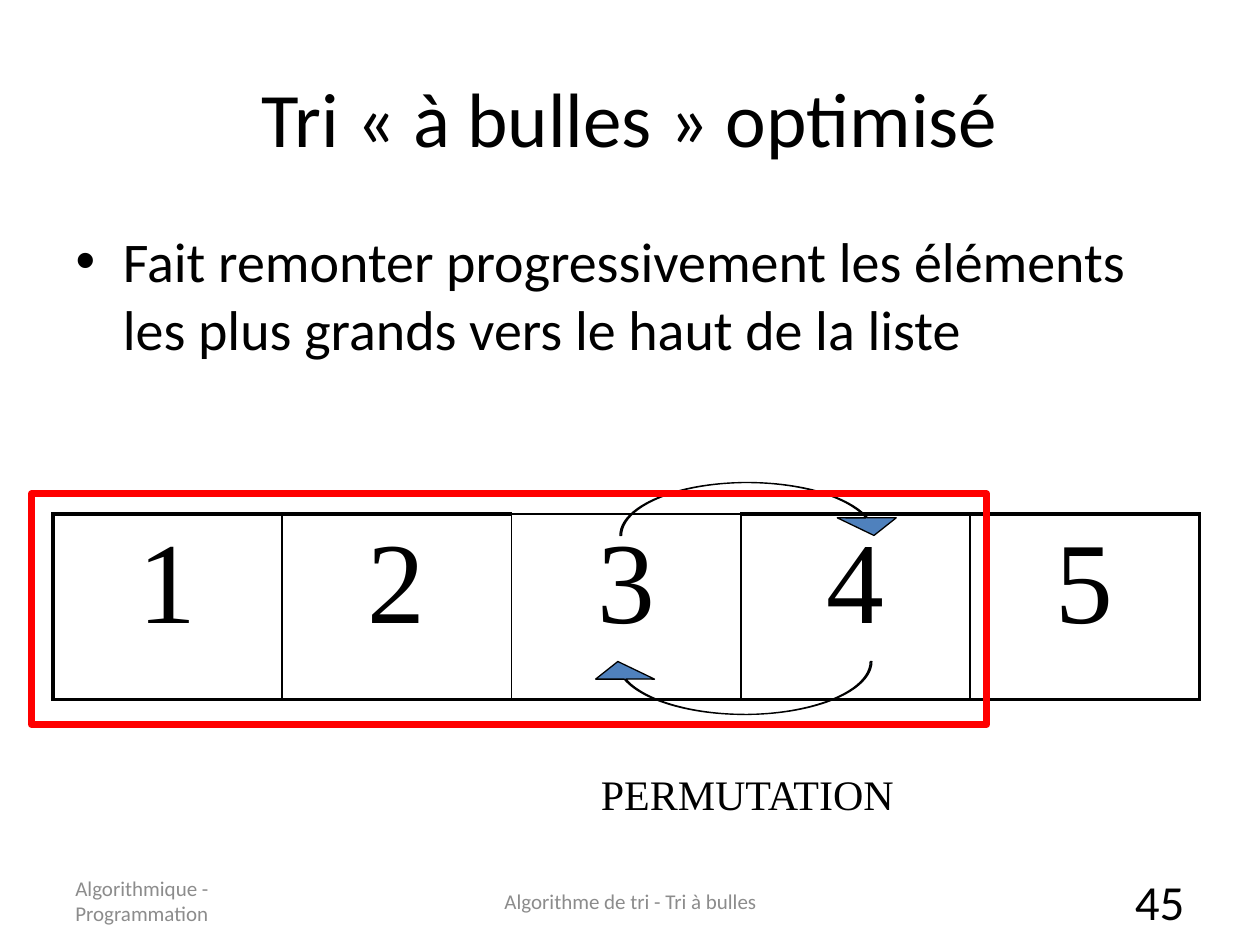
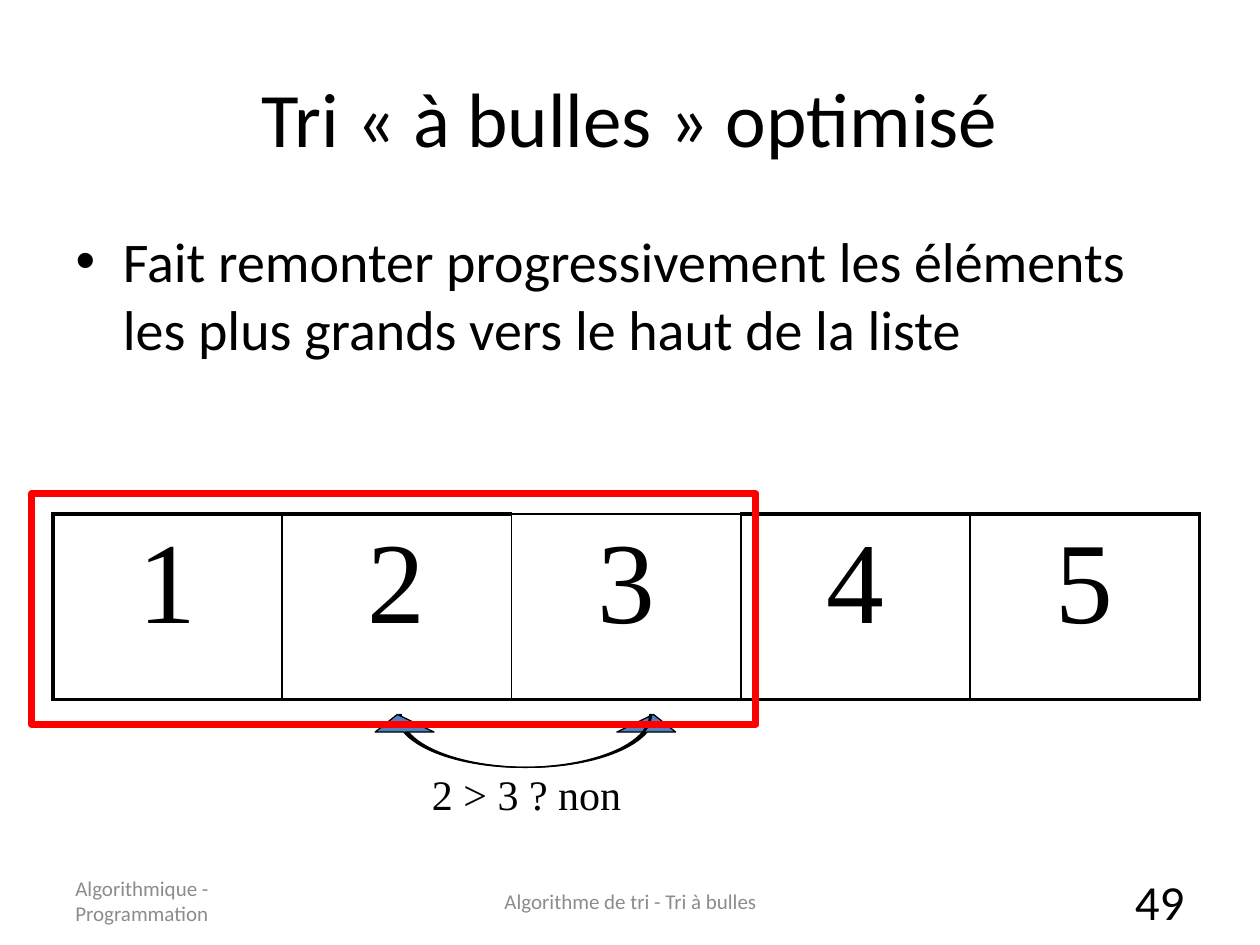
from pptx import Presentation
from pptx.dml.color import RGBColor
from pptx.enum.shapes import MSO_SHAPE as Shape
from pptx.enum.text import MSO_ANCHOR as Anchor, PP_ALIGN as Align
from pptx.oxml import parse_xml
from pptx.oxml.ns import nsdecls, qn
from pptx.util import Inches, Pt

BLACK, GREY, RED, BLUE = "000000", "8C8C8C", "FF0000", "4F81BD"
SANS, SERIF = "Calibri", "Times New Roman"

TITLE = "Tri « à bulles » optimisé"
RULE = "Fait remonter progressivement les éléments les plus grands vers le haut de la liste"
VALUES = ["1", "2", "3", "4", "5"]
COLUMN_WIDTH, ROW_HEIGHT = 1.82, 1.47
THIN, THICK = 1, 2.25

# Arrows are (left, top, flip); labels are (text, left, width)
STEPS = [
    {
        "number": "45",
        "arrows": [(4.92, 3.83, "flipV"), (4.67, 5.25, "flipH")],
        "label": ("PERMUTATION", 4.67, 2.59),
        "frame_width": 7.58,
    },
    {
        "number": "49",
        "arrows": [(3.17, 5.67, None), (2.92, 5.67, "flipH")],
        "label": ("2 > 3 ? non", 3.33, 1.7),
        "frame_width": 5.75,
    },
]


def write(frame, text, size, font, color=BLACK, align=Align.LEFT):
    """Fill a text frame with one formatted paragraph."""
    frame.text = text
    para = frame.paragraphs[0]
    para.alignment = align
    para.font.size = Pt(size)
    para.font.name = font
    para.font.color.rgb = RGBColor.from_string(color)


def place(shape, left, top, width, height):
    shape.left, shape.top = Inches(left), Inches(top)
    shape.width, shape.height = Inches(width), Inches(height)


deck = Presentation()
deck.slide_width, deck.slide_height = Inches(10), Inches(7.5)

for step in STEPS:
    page = deck.slides.add_slide(deck.slide_layouts[1])
    title, body = page.shapes.title, page.placeholders[1]
    place(title, 0.5, 0.3, 9, 1.25)
    write(title.text_frame, TITLE, 44, SANS, align=Align.CENTER)
    place(body, 0.5, 1.75, 9, 4.95)
    write(body.text_frame, RULE, 32, SANS)

    # List being sorted
    table = page.shapes.add_table(
        1, len(VALUES), Inches(0.42), Inches(4.08),
        Inches(COLUMN_WIDTH * len(VALUES)), Inches(ROW_HEIGHT)).table
    table.first_row = table.horz_banding = False
    table.rows[0].height = Inches(ROW_HEIGHT)
    for index, value in enumerate(VALUES):
        table.columns[index].width = Inches(COLUMN_WIDTH)
        cell = table.cell(0, index)
        write(cell.text_frame, value, 66, SERIF, align=Align.CENTER)
        borders = {
            "lnL": THICK if index == 0 else THIN,
            "lnR": THICK if index == len(VALUES) - 1 else THIN,
            "lnT": THIN if index == 2 else THICK,
            "lnB": THICK,
        }
        properties = cell._tc.get_or_add_tcPr()
        for side, weight in borders.items():
            properties.append(parse_xml(
                f'<a:{side} {nsdecls("a")} w="{Pt(weight)}"><a:solidFill>'
                f'<a:srgbClr val="{BLACK}"/></a:solidFill></a:{side}>'))
        cell.fill.background()

    # Arrows between the compared elements
    for left, top, flip in step["arrows"]:
        arrow = page.shapes.add_shape(
            Shape.CURVED_UP_ARROW, Inches(left), Inches(top), Inches(2.25), Inches(0.42))
        arrow.shadow.inherit = False
        for position, amount in enumerate((0.032, 1.112, 0.333)):
            arrow.adjustments[position] = amount
        arrow.fill.solid()
        arrow.fill.fore_color.rgb = RGBColor.from_string(BLUE)
        arrow.line.color.rgb = RGBColor.from_string(BLACK)
        arrow.line.width = Pt(0.75)
        if flip:
            arrow._element.spPr.find(qn("a:xfrm")).set(flip, "1")

    text, left, width = step["label"]
    label = page.shapes.add_textbox(Inches(left), Inches(6.05), Inches(width), Inches(0.5))
    label.text_frame.word_wrap = False
    write(label.text_frame, text, 24, SERIF)

    # Part of the list still to be sorted
    frame = page.shapes.add_shape(
        Shape.RECTANGLE, Inches(0.25), Inches(3.92), Inches(step["frame_width"]), Inches(1.83))
    frame.shadow.inherit = False
    frame.fill.background()
    frame.line.color.rgb = RGBColor.from_string(RED)
    frame.line.width = Pt(4)

    footers = [
        ("Algorithmique - Programmation", 0.5, 2.33, 12, GREY, Align.LEFT),
        ("Algorithme de tri - Tri à bulles", 3.42, 3.17, 12, GREY, Align.CENTER),
        (step["number"], 7.17, 2.33, 28, BLACK, Align.RIGHT),
    ]
    for text, left, width, size, color, align in footers:
        box = page.shapes.add_textbox(Inches(left), Inches(6.95), Inches(width), Inches(0.4))
        box.text_frame.word_wrap = True
        box.text_frame.vertical_anchor = Anchor.MIDDLE
        write(box.text_frame, text, size, SANS, color, align)

deck.save("out.pptx")
